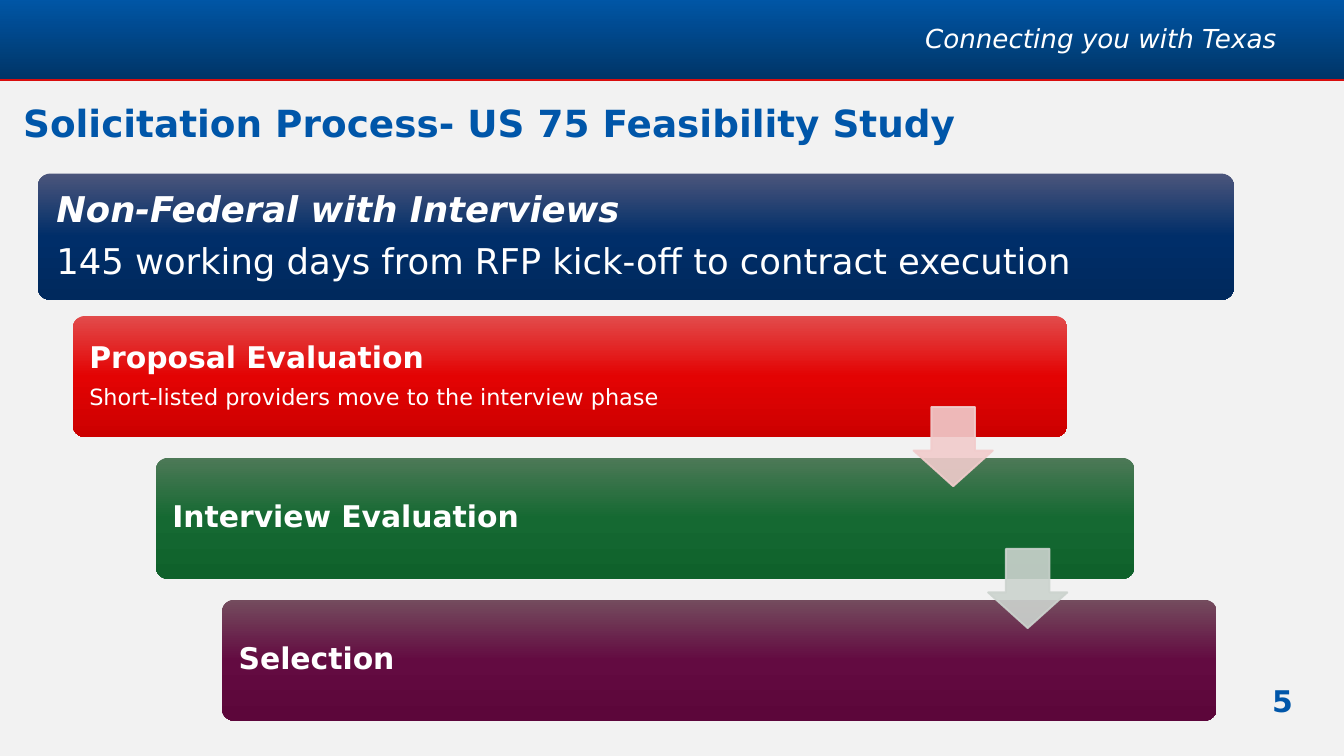
from lxml import etree
from pptx import Presentation
from pptx.dml.color import RGBColor
from pptx.enum.shapes import MSO_CONNECTOR, MSO_SHAPE
from pptx.enum.text import MSO_ANCHOR, PP_ALIGN
from pptx.oxml import parse_xml
from pptx.oxml.ns import nsdecls, qn
from pptx.util import Pt

HUES = {
    "back": "F2F2F2", "white": "FFFFFF", "blue": "0056A9", "rule": "D90D0D",
    "pink": "F1CCCC", "sage": "CCD3CE",
}
FADES = {
    "header": ["0057A8", "003567"],
    "navy": ["4B557B", "002E69", "00295D"],
    "red": ["E24B4B", "E30303", "CC0000"],
    "green": ["4D7957", "156932", "0F612B"],
    "plum": ["744C5E", "630B41", "5C063A"],
}


def fade(shape, hues):
    """Fill a shape from top to bottom with evenly spaced colours."""
    gap = 100000 // (len(hues) - 1)
    stops = "".join(
        f'<a:gs pos="{i * gap}"><a:srgbClr val="{hue}"/></a:gs>'
        for i, hue in enumerate(hues)
    )
    grad = parse_xml(
        f'<a:gradFill {nsdecls("a")} rotWithShape="1"><a:gsLst>{stops}</a:gsLst>'
        '<a:lin ang="5400000" scaled="0"/></a:gradFill>'
    )
    props = shape._element.spPr
    props.find(qn("a:prstGeom")).addnext(grad)


def write(shape, *lines, hue="white", size=16, bold=False, italic=False,
          align=PP_ALIGN.LEFT, anchor=MSO_ANCHOR.MIDDLE, inset=0, space=0.9):
    """Set text; each line is a string or a (string, format overrides) pair."""
    frame = shape.text_frame
    frame.word_wrap = True
    frame.vertical_anchor = anchor
    frame.margin_left = frame.margin_right = Pt(inset)
    frame.margin_top = frame.margin_bottom = Pt(inset)
    for i, line in enumerate(lines):
        text, own = (line, {}) if isinstance(line, str) else line
        para = frame.add_paragraph() if i else frame.paragraphs[0]
        para.alignment = align
        para.line_spacing = space
        points = own.get("size", size)
        if i < len(lines) - 1:
            para.space_after = Pt(round(points * 0.39, 1))
        run = para.add_run()
        run.text = text
        font = run.font
        font.name = "DejaVu Sans"
        font.size = Pt(points)
        font.bold = own.get("bold", bold)
        font.italic = own.get("italic", italic)
        font.color.rgb = RGBColor.from_string(HUES[hue])


class Deck:
    def __init__(self, width, height):
        self.file = Presentation()
        self.file.slide_width, self.file.slide_height = Pt(width), Pt(height)
        self.slide = self.file.slides.add_slide(self.file.slide_layouts[5])
        fill = self.slide.background.fill
        fill.solid()
        fill.fore_color.rgb = RGBColor.from_string(HUES["back"])

    def title(self, text, *box):
        shape = self.slide.shapes.title
        shape.left, shape.top, shape.width, shape.height = map(Pt, box)
        write(shape, text, hue="blue", size=20, bold=True,
              anchor=MSO_ANCHOR.BOTTOM, space=1.0)

    def label(self, text, *box, **style):
        shape = self.slide.shapes.add_textbox(*map(Pt, box))
        write(shape, text, align=PP_ALIGN.RIGHT, **style)

    def shape(self, kind, *box):
        shape = self.slide.shapes.add_shape(kind, *map(Pt, box))
        shape.shadow.inherit = False
        return shape

    def header(self, *box):
        shape = self.shape(MSO_SHAPE.RECTANGLE, *box)
        shape.line.fill.background()
        fade(shape, FADES["header"])

    def rule(self, left, right, top):
        line = self.slide.shapes.add_connector(
            MSO_CONNECTOR.STRAIGHT, Pt(left), Pt(top), Pt(right), Pt(top))
        line.line.color.rgb = RGBColor.from_string(HUES["rule"])
        line.line.width = Pt(1)
        etree.SubElement(line._element.spPr, qn("a:effectLst"))

    def bar(self, hue, box, *lines, **style):
        shape = self.shape(MSO_SHAPE.ROUNDED_RECTANGLE, *box)
        shape.adjustments[0] = 0.1
        shape.line.fill.background()
        fade(shape, FADES[hue])
        write(shape, *lines, bold=True, **style)

    def arrow(self, hue, left, top, side=42.5):
        shape = self.shape(MSO_SHAPE.DOWN_ARROW, left, top, side, side)
        shape.adjustments[0], shape.adjustments[1] = 0.55, 0.45
        shape.fill.solid()
        shape.line.width = Pt(1)
        for color in (shape.fill.fore_color, shape.line.color):
            color.rgb = RGBColor.from_string(HUES[hue])
        for node in shape._element.spPr.iter(qn("a:srgbClr")):
            etree.SubElement(node, qn("a:alpha"), val="90000")


def main():
    deck = Deck(720, 405)
    deck.header(-0.7, -2, 721.4, 44.6)
    deck.rule(-0.7, 720.7, 43)
    deck.label("5", 620.6, 362.2, 72, 23, hue="blue", bold=True,
               anchor=MSO_ANCHOR.BOTTOM)
    deck.label("Connecting you with Texas", 453.6, 0, 230.4, 43,
               size=14, italic=True)
    deck.title("Solicitation Process- US 75 Feasibility Study",
               12.4, 46, 658, 31.7)

    plain = {"bold": False, "italic": False}
    deck.bar("navy", (20.3, 93, 640.8, 67.7),
             ("Non-Federal with Interviews", {"italic": True}),
             ("145 working days from RFP kick-off to contract execution", plain),
             size=19, inset=8)

    first, step = 169.3, 76
    steps = [
        ("red", 39, 532.8, ["Proposal Evaluation", (
            "Short-listed providers move to the interview phase",
            {"size": 12, **plain})]),
        ("green", 83.5, 524.2, ["Interview Evaluation"]),
        ("plum", 119, 532.8, ["Selection"]),
    ]
    for i, (hue, left, width, lines) in enumerate(steps):
        deck.bar(hue, (left, first + i * step, width, 64.8), *lines, inset=7)
    for i, (hue, left) in enumerate([("pink", 489.4), ("sage", 529.3)]):
        deck.arrow(hue, left, first + 48.7 + i * step)

    deck.file.save("out.pptx")


if __name__ == "__main__":
    main()
